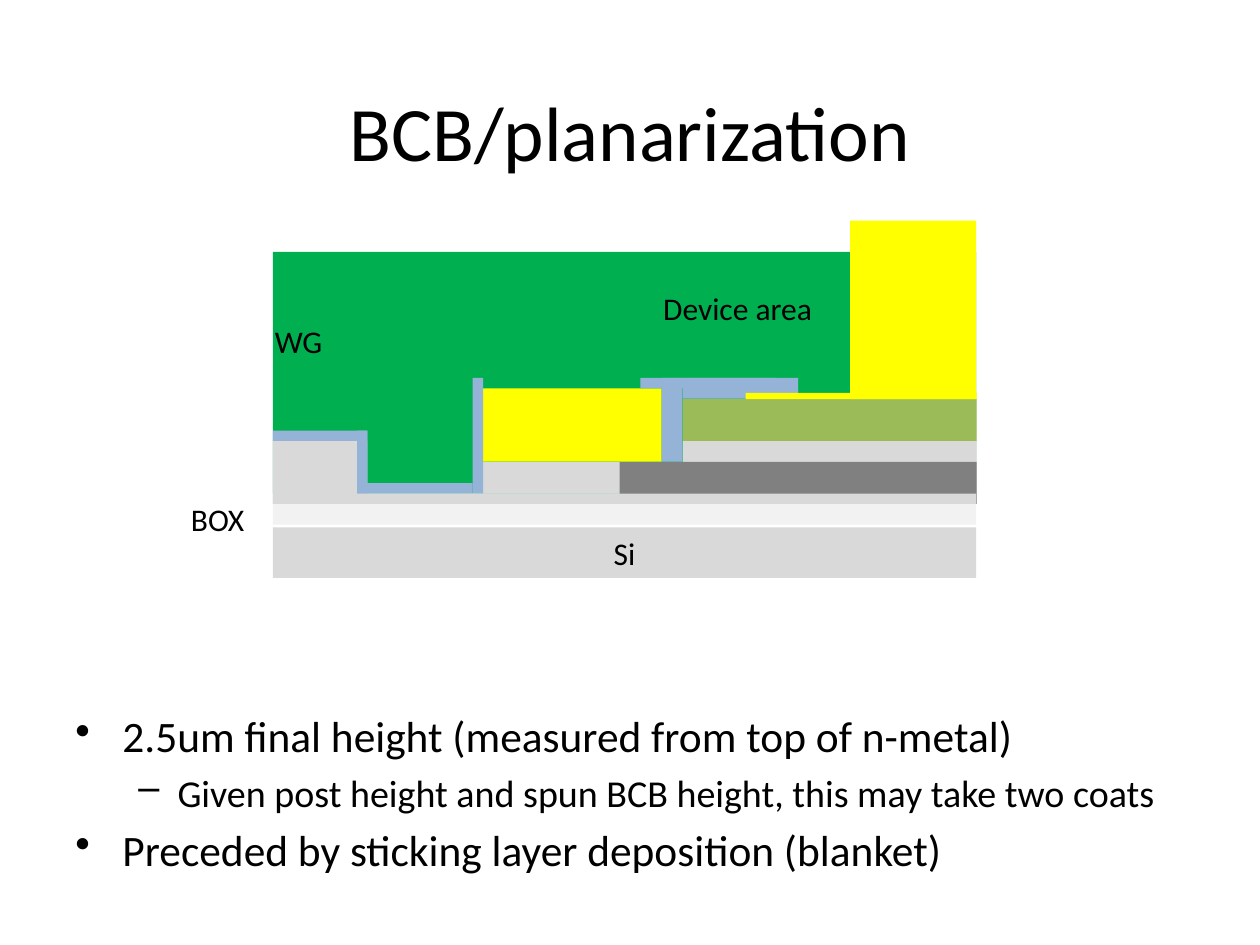
from typing import NamedTuple

import pptx
import pptx.dml.color
import pptx.enum.shapes
import pptx.enum.text
import pptx.util
from lxml import etree
from pptx.oxml import ns

COLORS = {
    "bcb": "00B050",
    "silicon": "D9D9D9",
    "oxide": "F2F2F2",
    "n_layer": "808080",
    "mesa": "9BBB59",
    "sticking": "95B3D7",
    "metal": "FFFF00",
    "text": "000000",
}
FONT = "Calibri"
GRID = 2.54 / 12  # the drawing sits on a grid of twelfths of an inch
RECT = pptx.enum.shapes.MSO_SHAPE.RECTANGLE
SNIPPED = pptx.enum.shapes.MSO_SHAPE.SNIP_2_SAME_RECTANGLE
LEFT = pptx.enum.text.PP_ALIGN.LEFT
CENTER = pptx.enum.text.PP_ALIGN.CENTER
TOP = pptx.enum.text.MSO_ANCHOR.TOP
MIDDLE = pptx.enum.text.MSO_ANCHOR.MIDDLE


class Layer(NamedTuple):
    """One block of the cross-section, in grid steps."""
    color: str
    left: float
    top: float
    width: float
    height: float
    preset: int = RECT
    text: str = ""


class Label(NamedTuple):
    """One line of free text, in grid steps."""
    text: str
    left: float
    top: float
    width: float
    height: float
    size: float = 18
    align: int = LEFT
    anchor: int = TOP


class Bullet(NamedTuple):
    """One list entry: size in points, indents in centimetres."""
    text: str
    level: int
    mark: str
    size: float
    margin: float
    hanging: float


# Cross-section from back to front; the labels go between the two groups
BACK_LAYERS = [
    Layer("bcb", 26, 24, 67, 23),
    Layer("silicon", 46, 44, 47, 3),
    Layer("silicon", 65, 42, 28, 6),
    Layer("silicon", 26, 42, 9, 6),
    Layer("silicon", 26, 50.2, 67, 4.8, text="Si"),
    Layer("oxide", 26, 48, 67, 2),
    Layer("n_layer", 59, 44, 34, 4),
]
FRONT_LAYERS = [
    Layer("mesa", 65, 38, 28, 4, SNIPPED),
    Layer("silicon", 26, 47, 67, 1),
    Layer("sticking", 65, 36, 11, 2),
    Layer("metal", 71, 37.4, 22, 0.6),
    Layer("metal", 46, 37, 17, 7),
    Layer("sticking", 63, 36, 2, 8),
    Layer("sticking", 61, 36, 13, 1),
    Layer("sticking", 45, 36, 1, 11),
    Layer("sticking", 34, 41, 1, 6),
    Layer("sticking", 26, 41, 9, 1),
    Layer("sticking", 34, 46, 11, 1),
    Layer("metal", 81, 21, 12, 17),
]
TITLE = Label("BCB/planarization", 6, 5, 108, 15, 44, CENTER, MIDDLE)
LABELS = [
    Label("BOX", 17, 47, 8, 5),
    Label("Device area", 62, 27, 19, 4.8),
    Label("WG", 25, 30.1, 19, 4.8),
]
BULLETS = [
    Bullet("2.5um final height (measured from top of n-metal)",
           0, "•", 24.8, 0.95, 0.95),
    Bullet("Given post height and spun BCB height, this may take two coats",
           1, "–", 21.7, 2.06, 0.79),
    Bullet("Preceded by sticking layer deposition (blanket)",
           0, "•", 24.8, 0.95, 0.95),
]


def step(count: float) -> pptx.util.Length:
    return pptx.util.Cm(round(count * GRID, 2))


def rgb(name: str) -> pptx.dml.color.RGBColor:
    return pptx.dml.color.RGBColor.from_string(COLORS[name])


def write(para, text: str, size: float, align: int = LEFT) -> None:
    para.text = text
    para.alignment = align
    para.font.name = FONT
    para.font.size = pptx.util.Pt(size)
    para.font.color.rgb = rgb("text")


def draw_layer(page, layer: Layer) -> None:
    block = page.shapes.add_shape(
        layer.preset, step(layer.left), step(layer.top),
        step(layer.width), step(layer.height))
    block.shadow.inherit = False
    block.fill.solid()
    block.fill.fore_color.rgb = rgb(layer.color)
    block.line.fill.background()
    if layer.preset == SNIPPED:
        for index in range(len(block.adjustments)):
            block.adjustments[index] = 0
    if layer.text:
        block.text_frame.vertical_anchor = MIDDLE
        write(block.text_frame.paragraphs[0], layer.text, 18, CENTER)


def add_text_frame(page, left: float, top: float, width: float, height: float):
    box = page.shapes.add_textbox(
        step(left), step(top), step(width), step(height))
    box.text_frame.word_wrap = True
    return box.text_frame


def draw_label(page, label: Label) -> None:
    frame = add_text_frame(
        page, label.left, label.top, label.width, label.height)
    frame.vertical_anchor = label.anchor
    write(frame.paragraphs[0], label.text, label.size, label.align)


def draw_bullets(page, bullets: list[Bullet]) -> None:
    frame = add_text_frame(page, 6, 67, 108, 17)
    for index, bullet in enumerate(bullets):
        para = frame.add_paragraph() if index else frame.paragraphs[0]
        write(para, bullet.text, bullet.size)
        para.level = bullet.level
        para.space_before = pptx.util.Pt(round(bullet.size * 0.2, 1))
        # Bullet mark and hanging indent
        properties = para._p.get_or_add_pPr()
        properties.set("marL", str(pptx.util.Cm(bullet.margin)))
        properties.set("indent", str(-pptx.util.Cm(bullet.hanging)))
        mark = etree.Element(ns.qn("a:buChar"), char=bullet.mark)
        properties.find(ns.qn("a:spcBef")).addnext(mark)


def main() -> None:
    deck = pptx.Presentation()
    deck.slide_width = pptx.util.Cm(25.4)
    deck.slide_height = pptx.util.Cm(19.05)
    page = deck.slides.add_slide(deck.slide_layouts[6])

    # Title and list
    draw_label(page, TITLE)
    draw_bullets(page, BULLETS)

    # Device cross-section
    for layer in BACK_LAYERS:
        draw_layer(page, layer)
    for label in LABELS:
        draw_label(page, label)
    for layer in FRONT_LAYERS:
        draw_layer(page, layer)

    deck.save("out.pptx")


if __name__ == "__main__":
    main()
